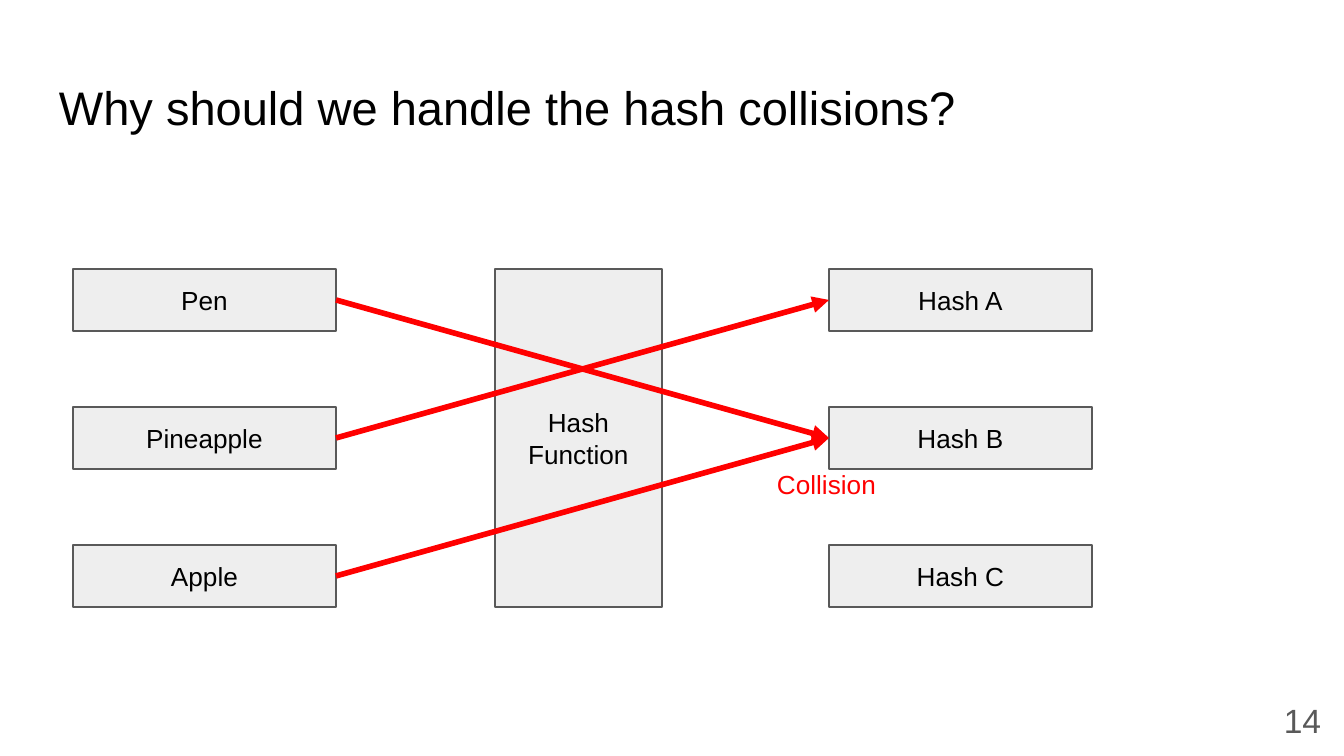
from lxml import etree
from pptx import Presentation
from pptx.dml.color import RGBColor
from pptx.enum.shapes import MSO_CONNECTOR, MSO_SHAPE
from pptx.enum.text import MSO_ANCHOR, PP_ALIGN
from pptx.oxml.ns import qn
from pptx.util import Pt

RECTANGLE = MSO_SHAPE.RECTANGLE
STRAIGHT = MSO_CONNECTOR.STRAIGHT
TOP, MIDDLE = MSO_ANCHOR.TOP, MSO_ANCHOR.MIDDLE
LEFT, CENTER = PP_ALIGN.LEFT, PP_ALIGN.CENTER

SCALE = 914400 / 134.4
COLORS = {"box": "EEEEEE", "gray": "595959", "text": "000000", "collision": "FF0000"}


def px(*lengths):
    return [round(length * SCALE) for length in lengths]


def write(shape, lines, size=14, color="text", align=CENTER, anchor=MIDDLE):
    frame = shape.text_frame
    margin = px(13)[0]
    frame_format = {
        "word_wrap": True, "vertical_anchor": anchor,
        "margin_left": margin, "margin_right": margin,
        "margin_top": margin, "margin_bottom": margin,
    }
    for name, value in frame_format.items():
        setattr(frame, name, value)
    for index, line in enumerate(lines):
        para = frame.add_paragraph() if index else frame.paragraphs[0]
        para.alignment = align
        span = para.add_run()
        span.text = line
        for name, value in {"name": "Arial", "size": Pt(size)}.items():
            setattr(span.font, name, value)
        span.font.color.rgb = RGBColor.from_string(COLORS[color])


deck = Presentation()
deck.slide_width, deck.slide_height = px(1344, 756)
page = deck.slides.add_slide(deck.slide_layouts[6])

key_left, function_left, hash_left = 73, 495, 829
first_top, row_step = 269, 138
box_width, box_height = 263, 62
function_height = 2 * row_step + box_height

boxes = []
for left, labels in [
    (key_left, ["Pen", "Pineapple", "Apple"]),
    (hash_left, ["Hash A", "Hash B", "Hash C"]),
]:
    for row, label in enumerate(labels):
        boxes.append(([label], left, first_top + row * row_step, box_width, box_height))
boxes.append((["Hash", "Function"], function_left, first_top, 167, function_height))

for lines, *place in boxes:
    box = page.shapes.add_shape(RECTANGLE, *px(*place))
    box.shadow.inherit = False
    box.fill.solid()
    box.fill.fore_color.rgb = RGBColor.from_string(COLORS["box"])
    box.line.color.rgb = RGBColor.from_string(COLORS["gray"])
    box.line.width = Pt(0.75)
    write(box, lines)

for key_row, hash_row in [(0, 1), (1, 0), (2, 1)]:
    start_y, end_y = [
        first_top + row * row_step + box_height // 2 for row in (key_row, hash_row)
    ]
    arrow = page.shapes.add_connector(
        STRAIGHT, *px(key_left + box_width, start_y, hash_left, end_y)
    )
    arrow.line.color.rgb = RGBColor.from_string(COLORS["collision"])
    arrow.line.width = Pt(3)
    properties = arrow.line._get_or_add_ln()
    etree.SubElement(properties, qn("a:tailEnd"), type="triangle")
    etree.SubElement(properties.getparent(), qn("a:effectLst"))

for text, place, text_format in [
    ("Collision", (695, 453, box_width, box_height), {"color": "collision"}),
    ("Why should we handle the hash collisions?", (46, 66, 1253, 85),
     {"size": 25.2, "align": LEFT, "anchor": TOP}),
    ("14", (1266, 687, 73, 67), {"size": 18, "color": "gray", "anchor": TOP}),
]:
    write(page.shapes.add_textbox(*px(*place)), [text], **text_format)

deck.save("out.pptx")
